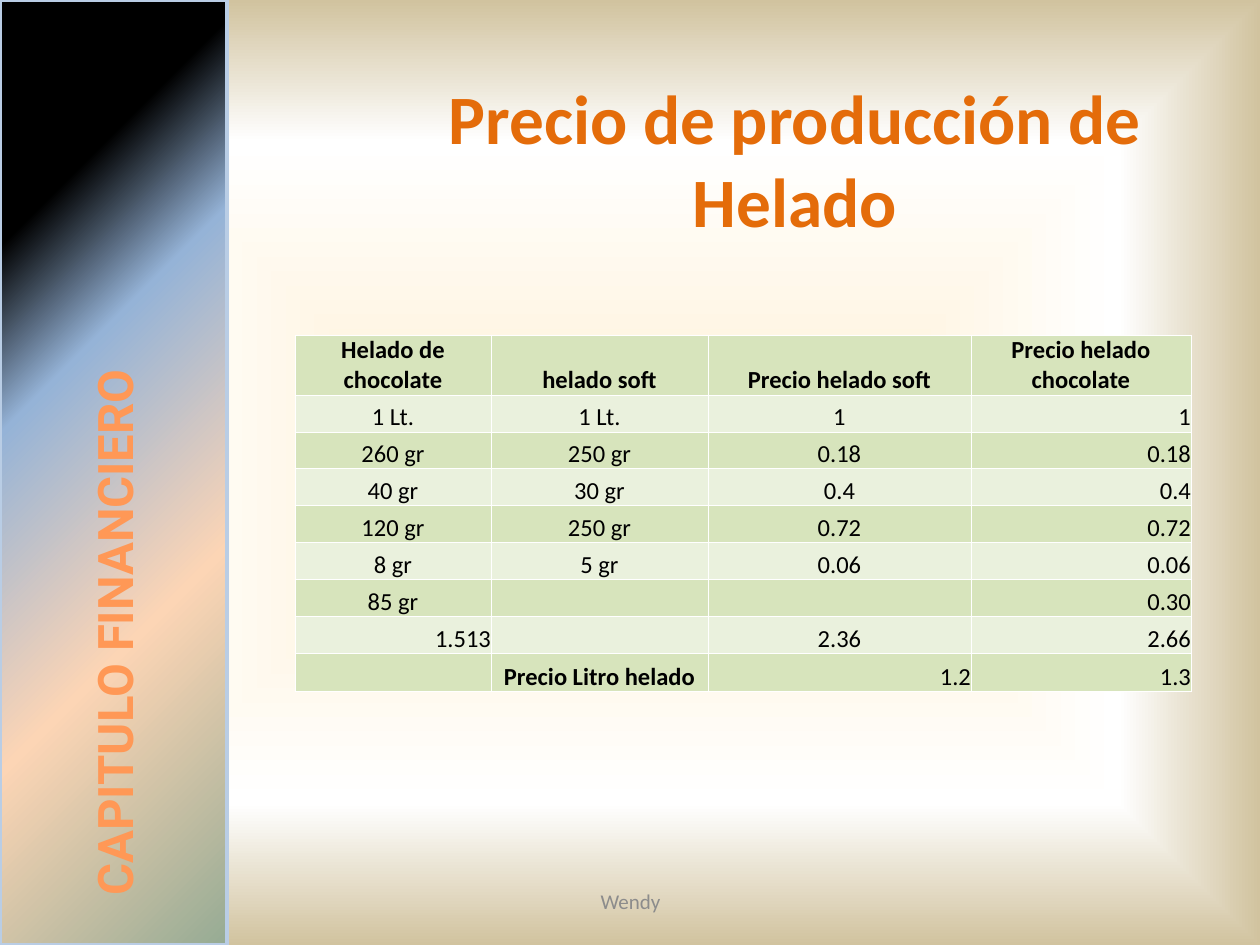
"""Build the slide with the production prices of ice cream."""
from lxml import etree
from pptx import Presentation
from pptx import util as u
from pptx.dml.color import RGBColor
from pptx.enum import shapes, text
from pptx.oxml.ns import qn

COLORS = {
    "title": "E46C0A", "footer": "8C8C8C", "chapter": "FF9856", "edge": "B9CDE5",
    "dark_row": "D7E4BC", "light_row": "EAF1DD", "ink": "000000", "grid": "FFFFFF",
}
BACKDROP = [(0, "FFEFD1"), (70, "FFFFFF"), (100, "D1C39F")]
SIDEBAR = [(21, "000000"), (37, "95B3D7"), (66, "FCD5B5"), (100, "96AB94")]
ROWS = [
    ["Helado de chocolate", "helado soft", "Precio helado soft", "Precio helado chocolate"],
    ["1 Lt.", "1 Lt.", "1", "1"],
    ["260 gr", "250 gr", "0.18", "0.18"],
    ["40 gr", "30 gr", "0.4", "0.4"],
    ["120 gr", "250 gr", "0.72", "0.72"],
    ["8 gr", "5 gr", "0.06", "0.06"],
    ["85 gr", "", "", "0.30"],
    ["1.513", "", "2.36", "2.66"],
    ["", "Precio Litro helado", "1.2", "1.3"],
]
WIDTHS = [196, 217, 263, 220]
HEIGHTS = [60] + [37] * 7 + [38]
RIGHT_ALIGNED = {(row, 3) for row in range(1, 9)} | {(7, 0), (8, 2)}
BOLD = {(0, column) for column in range(4)} | {(8, 1)}
PX = 914400 / 126


def set_gradient(owner, stops, direction):
    gradient = next(owner.iter(qn("a:gradFill")))
    for child in list(gradient):
        gradient.remove(child)
    stop_list = etree.SubElement(gradient, qn("a:gsLst"))
    for position, color in stops:
        stop = etree.SubElement(stop_list, qn("a:gs"), pos=str(position * 1000))
        etree.SubElement(stop, qn("a:srgbClr"), val=color)
    gradient.append(direction)


def write(frame, words, size, color, bold=False, font="Calibri", align=text.PP_ALIGN.CENTER):
    para = frame.paragraphs[0]
    para.text = words
    para.alignment = align
    para.font.name = font
    para.font.size = u.Pt(size)
    para.font.bold = bold
    para.font.color.rgb = RGBColor.from_string(COLORS[color])
    return para


deck = Presentation()
deck.slide_width, deck.slide_height = u.Inches(10), u.Inches(7.5)
page = deck.slides.add_slide(deck.slide_layouts[6])

page.background.fill.gradient()
shade = etree.Element(qn("a:path"), path="shape")
etree.SubElement(shade, qn("a:fillToRect"), l="50000", t="50000", r="50000", b="50000")
set_gradient(page.element, BACKDROP, shade)

for words, bounds, size, color, bold, top_margin in [
    ("Precio de producción de Helado", (393, 38, 804, 157), 39.6, "title", True, 90),
    ("Wendy", (431, 876, 399, 50), 12, "footer", False, 6),
]:
    box = page.shapes.add_textbox(*[round(side * PX) for side in bounds])
    frame = box.text_frame
    frame.word_wrap = True
    frame.vertical_anchor = text.MSO_ANCHOR.MIDDLE
    frame.margin_top = round(top_margin * PX)
    write(frame, words, size, color, bold)

sidebar = page.shapes.add_shape(shapes.MSO_SHAPE.RECTANGLE, 0, 0, round(227 * PX), round(945 * PX))
sidebar.shadow.inherit = False
sidebar.fill.gradient()
set_gradient(sidebar.element, SIDEBAR, etree.Element(qn("a:lin"), ang="2700000", scaled="0"))
sidebar.line.color.rgb = RGBColor.from_string(COLORS["edge"])
sidebar.line.width = u.Pt(2)
frame = sidebar.text_frame
frame.vertical_anchor = text.MSO_ANCHOR.MIDDLE
frame._txBody.bodyPr.set("vert", "vert270")
para = write(frame, "CAPITULO FINANCIERO", 28, "chapter", True, "Roboto", text.PP_ALIGN.LEFT)
para._p.get_or_add_pPr().set("marL", str(round(37 * PX)))

table = page.shapes.add_table(
    len(ROWS), len(WIDTHS),
    *[round(side * PX) for side in (295, 335, sum(WIDTHS), sum(HEIGHTS))]).table
table.first_row = table.horz_banding = False
for column, width in zip(table.columns, WIDTHS):
    column.width = round(width * PX)
for row, height in zip(table.rows, HEIGHTS):
    row.height = round(height * PX)

for row, values in enumerate(ROWS):
    for column, value in enumerate(values):
        cell = table.cell(row, column)
        cell.margin_left = cell.margin_right = cell.margin_top = cell.margin_bottom = 0
        cell.vertical_anchor = text.MSO_ANCHOR.BOTTOM
        align = text.PP_ALIGN.RIGHT if (row, column) in RIGHT_ALIGNED else text.PP_ALIGN.CENTER
        para = write(cell.text_frame, value, 14, "ink", (row, column) in BOLD, align=align)
        if not value:
            etree.SubElement(para._p, qn("a:endParaRPr"), sz="1400")
        properties = cell._tc.get_or_add_tcPr()
        for side in ("L", "R", "T", "B"):
            border = etree.SubElement(properties, qn(f"a:ln{side}"), w=str(u.Pt(0.5)))
            solid = etree.SubElement(border, qn("a:solidFill"))
            etree.SubElement(solid, qn("a:srgbClr"), val=COLORS["grid"])
        cell.fill.solid()
        cell.fill.fore_color.rgb = RGBColor.from_string(
            COLORS["light_row" if row % 2 else "dark_row"])

deck.save("out.pptx")
